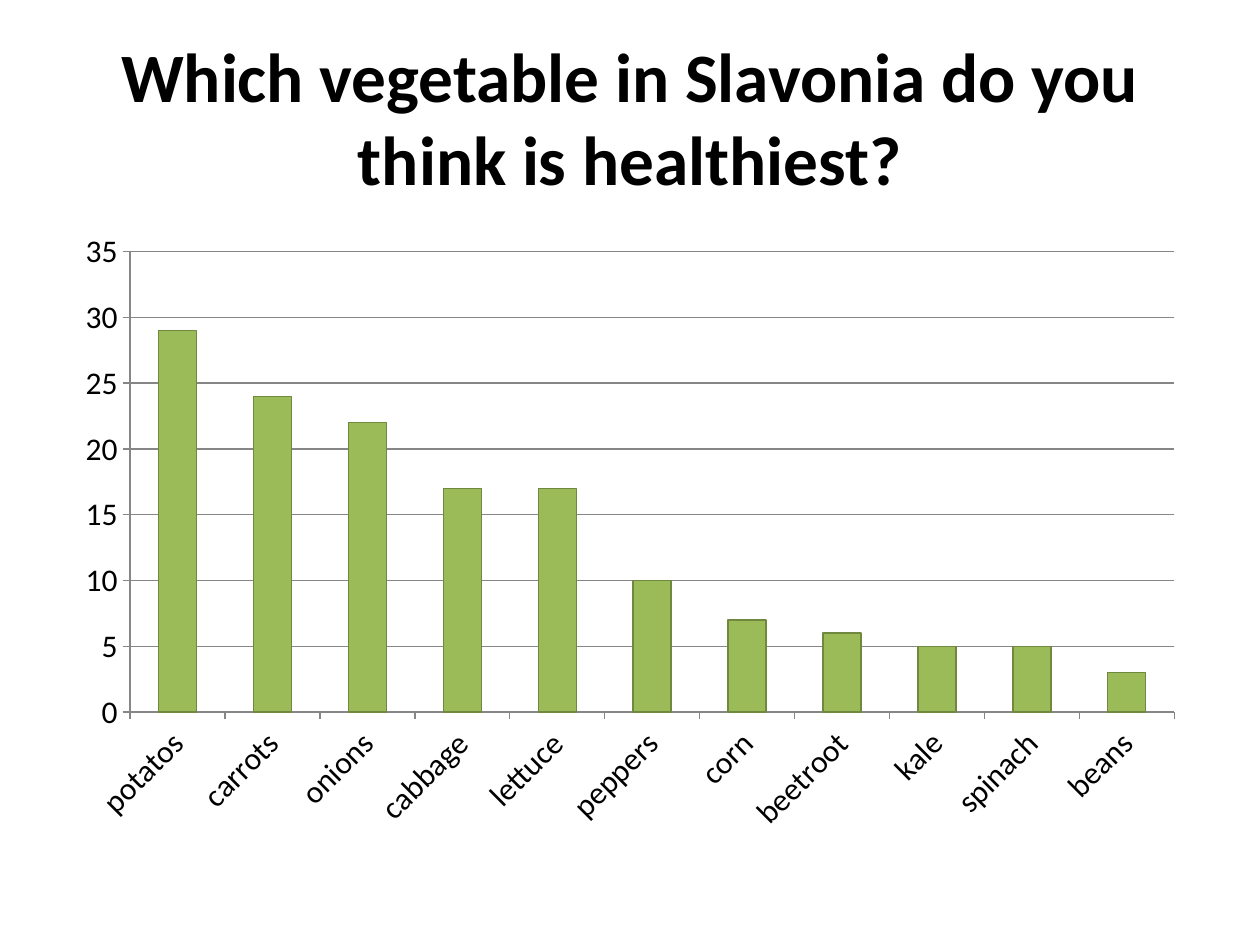
"""Build a slide with a column chart of survey votes for the healthiest vegetable."""
from pptx import Presentation
from pptx.chart.data import CategoryChartData
from pptx.dml.color import RGBColor
from pptx.enum.chart import XL_CHART_TYPE, XL_TICK_MARK
from pptx.enum.text import MSO_ANCHOR, PP_ALIGN
from pptx.util import Pt

SCALE = 914400 / 126
SIZE = (1260, 945)
TITLE = "Which vegetable in Slavonia do you think is healthiest?"
TITLE_BOX = (63, 38, 1134, 157)
CHART_BOX = (63, 220, 1134, 624)
VOTES = {
    "potatos": 29, "carrots": 24, "onions": 22, "cabbage": 17,
    "lettuce": 17, "peppers": 10, "corn": 7, "beetroot": 6,
    "kale": 5, "spinach": 5, "beans": 3,
}
COLORS = {"text": "000000", "bar": "9BBB59", "edge": "71893F", "grid": "868686"}
FONTS = {
    "title": {"name": "Calibri", "size": Pt(39.6), "bold": True},
    "chart": {"name": "Calibri", "size": Pt(18), "bold": False},
}


def emu(box):
    return [round(n * SCALE) for n in box]


def color(key):
    return RGBColor.from_string(COLORS[key])


def apply(target, values):
    for name, value in values.items():
        setattr(target, name, value)


def style(font, key):
    apply(font, FONTS[key])
    font.color.rgb = color("text")


def stroke(line, key):
    line.color.rgb = color(key)
    line.width = Pt(0.75)


def add_title(slide):
    frame = slide.shapes.add_textbox(*emu(TITLE_BOX)).text_frame
    apply(frame, {"word_wrap": True, "vertical_anchor": MSO_ANCHOR.MIDDLE})
    para = frame.paragraphs[0]
    para.alignment = PP_ALIGN.CENTER
    run = para.add_run()
    run.text = TITLE
    style(run.font, "title")


def add_votes(slide):
    data = CategoryChartData()
    data.categories = list(VOTES)
    data.add_series("Series 1", list(VOTES.values()))
    kind = XL_CHART_TYPE.COLUMN_CLUSTERED
    chart = slide.shapes.add_chart(kind, *emu(CHART_BOX), data).chart
    apply(chart, {"has_legend": False, "has_title": False})
    style(chart.font, "chart")

    plot = chart.plots[0]
    apply(plot, {"gap_width": 150, "vary_by_categories": False})
    bars = plot.series[0].format
    bars.fill.solid()
    bars.fill.fore_color.rgb = color("bar")
    stroke(bars.line, "edge")

    across, up = chart.category_axis, chart.value_axis
    for axis in (across, up):
        apply(axis, {"major_tick_mark": XL_TICK_MARK.OUTSIDE,
                     "minor_tick_mark": XL_TICK_MARK.NONE})
        stroke(axis.format.line, "grid")
    apply(up, {"minimum_scale": 0, "maximum_scale": 35, "major_unit": 5,
               "has_major_gridlines": True})
    stroke(up.major_gridlines.format.line, "grid")
    style(across.tick_labels.font, "chart")
    across._element.txPr.bodyPr.set("rot", "-2700000")


def main():
    deck = Presentation()
    deck.slide_width, deck.slide_height = emu(SIZE)
    slide = deck.slides.add_slide(deck.slide_layouts[6])
    add_title(slide)
    add_votes(slide)
    deck.save("out.pptx")


if __name__ == "__main__":
    main()
